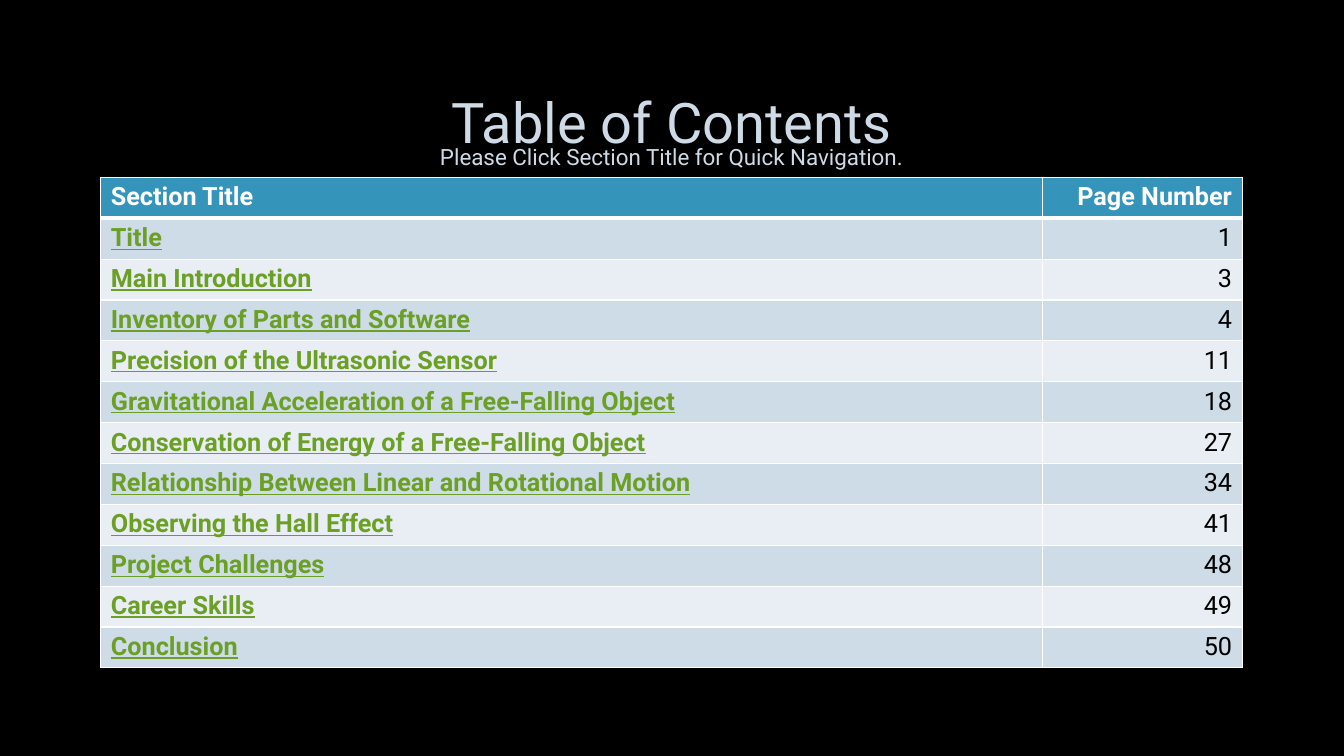
from dataclasses import dataclass

from lxml import etree
from pptx import Presentation
from pptx.dml.color import RGBColor
from pptx.enum.text import MSO_ANCHOR, PP_ALIGN
from pptx.oxml import parse_xml
from pptx.oxml.ns import nsdecls, qn
from pptx.util import Inches, Pt

LEFT, MID, RIGHT = PP_ALIGN.LEFT, PP_ALIGN.CENTER, PP_ALIGN.RIGHT
CENTER = MSO_ANCHOR.MIDDLE
FONT = "Roboto"
BLACK, WHITE = "000000", "FFFFFF"
PALE, BLUE, GREEN = "CEDBE6", "3494BA", "6B9F25"
BANDS = ("CEDCE7", "E8EEF3")
EDGE, WIDE = 1, 3
X, WIDTH = 1, 11.32
ROW = 4.87 / 12


@dataclass
class Entry:
    title: str
    page: int


@dataclass
class Head:
    text: str
    top: float
    height: float
    size: int


ENTRIES = [
    Entry("Title", 1),
    Entry("Main Introduction", 3),
    Entry("Inventory of Parts and Software", 4),
    Entry("Precision of the Ultrasonic Sensor", 11),
    Entry("Gravitational Acceleration of a Free-Falling Object", 18),
    Entry("Conservation of Energy of a Free-Falling Object", 27),
    Entry("Relationship Between Linear and Rotational Motion", 34),
    Entry("Observing the Hall Effect", 41),
    Entry("Project Challenges", 48),
    Entry("Career Skills", 49),
    Entry("Conclusion", 50),
]
HEADS = [
    Head("Table of Contents", 0.67, 1.06, 40),
    Head("Please Click Section Title for Quick Navigation.", 1.39, 0.33, 16),
]


def color(code: str) -> RGBColor:
    return RGBColor.from_string(code)


def write(frame, text: str, *, size: int = 18, tint: str = BLACK,
          bold: bool = False, under: bool = False, align=LEFT):
    para = frame.paragraphs[0]
    para.alignment = align
    run = para.add_run()
    run.text = text
    font = run.font
    font.name, font.size = FONT, Pt(size)
    font.bold, font.underline = bold, under
    font.color.rgb = color(tint)
    return run


def outline(run) -> None:
    """Give the letters a faint dark edge."""
    line = parse_xml(
        f'<a:ln {nsdecls("a")} w="{Pt(0.75)}"><a:solidFill>'
        '<a:srgbClr val="404040"><a:alpha val="10000"/></a:srgbClr>'
        '</a:solidFill><a:prstDash val="solid"/></a:ln>')
    run.font._element.insert(0, line)


def border(cell, top: int, bottom: int) -> None:
    props = cell._tc.get_or_add_tcPr()
    sides = {"lnL": EDGE, "lnR": EDGE, "lnT": top, "lnB": bottom}
    for side, width in sides.items():
        line = etree.SubElement(props, qn(f"a:{side}"), w=str(Pt(width)))
        fill = etree.SubElement(line, qn("a:solidFill"))
        etree.SubElement(fill, qn("a:srgbClr"), val=WHITE)


def paint(cell, fill: str, top: int = EDGE, bottom: int = EDGE) -> None:
    border(cell, top, bottom)
    cell.fill.solid()
    cell.fill.fore_color.rgb = color(fill)


def add_head(slide, head: Head) -> None:
    box = slide.shapes.add_textbox(Inches(X), Inches(head.top),
                                   Inches(WIDTH), Inches(head.height))
    frame = box.text_frame
    frame.word_wrap = True
    frame.vertical_anchor = CENTER
    outline(write(frame, head.text, size=head.size, tint=PALE, align=MID))


def add_index(slide) -> None:
    count = len(ENTRIES) + 1
    table = slide.shapes.add_table(count, 2, Inches(X), Inches(1.76),
                                   Inches(WIDTH), Inches(ROW * count)).table
    for col, width in zip(table.columns, (9.34, 1.98)):
        col.width = Inches(width)
    for row in table.rows:
        row.height = Inches(ROW)

    # Header row
    for i, (text, align) in enumerate([("Section Title", LEFT),
                                       ("Page Number", RIGHT)]):
        cell = table.cell(0, i)
        paint(cell, BLUE, bottom=WIDE)
        write(cell.text_frame, text, tint=WHITE, bold=True, align=align)

    # Banded section rows
    for i, entry in enumerate(ENTRIES):
        name, page = table.cell(i + 1, 0), table.cell(i + 1, 1)
        for cell in (name, page):
            paint(cell, BANDS[i % 2], top=EDGE if i else WIDE)
        write(name.text_frame, entry.title, tint=GREEN, bold=True, under=True)
        write(page.text_frame, str(entry.page), align=RIGHT)


def main() -> None:
    deck = Presentation()
    deck.slide_width, deck.slide_height = Inches(13.33), Inches(7.5)
    slide = deck.slides.add_slide(deck.slide_layouts[6])
    back = slide.background.fill
    back.solid()
    back.fore_color.rgb = color(BLACK)

    title, hint = HEADS
    add_head(slide, title)
    add_index(slide)
    add_head(slide, hint)
    deck.save("out.pptx")


if __name__ == "__main__":
    main()
